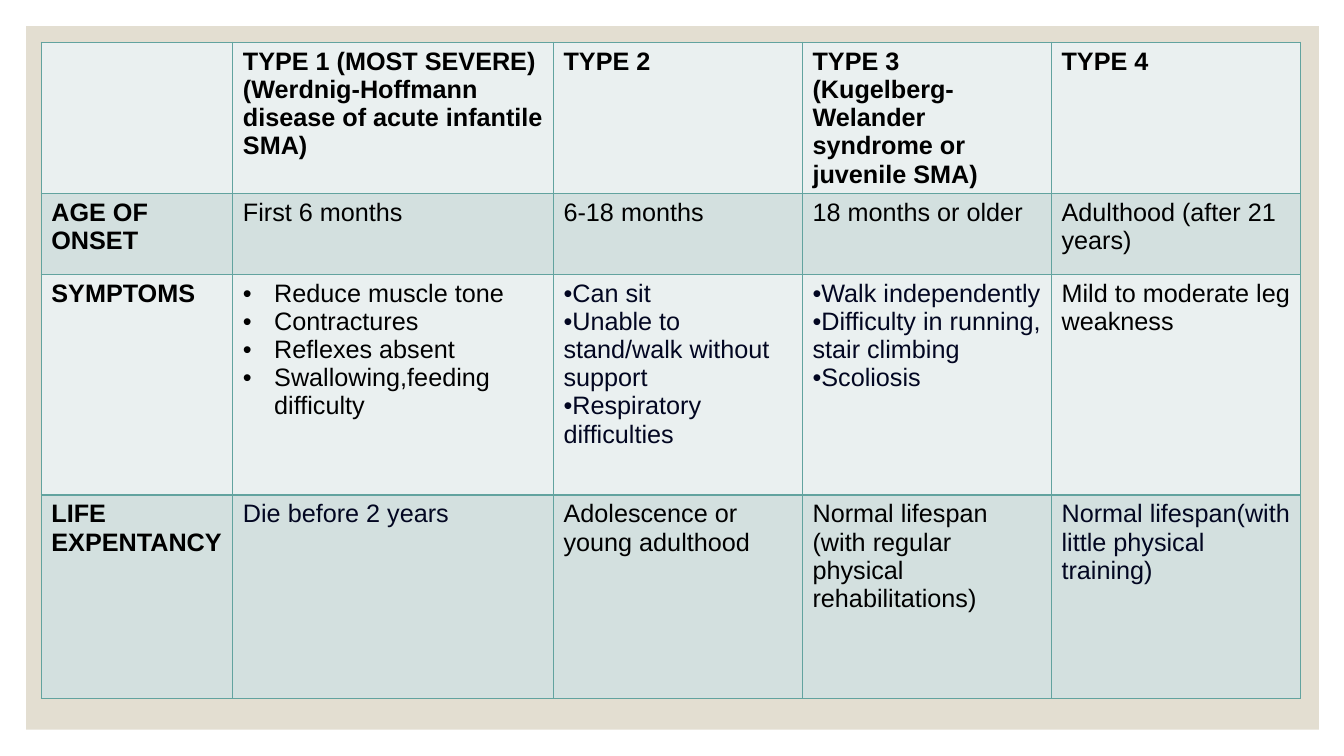
from dataclasses import dataclass

from lxml.etree import SubElement
from pptx import Presentation
from pptx.dml.color import RGBColor
from pptx.enum.shapes import MSO_SHAPE
from pptx.oxml import parse_xml
from pptx.oxml.ns import nsdecls, qn
from pptx.util import Inches, Pt


@dataclass(frozen=True)
class Theme:
    font: str = "Arial"
    size: int = 18
    black: str = "000000"
    ink: str = "020621"
    panel: str = "E3DED1"
    border: str = "62A39F"
    border_width: int = 1
    bands: tuple = ("EAF0F0", "D3E0DF")


COLUMN_WIDTHS = [1.9, 3.18, 2.47, 2.47, 2.47]
ROW_HEIGHTS = [1.49, 0.8, 2.19, 2.02]
HANGING_COLUMN = 1
INK_CELLS = {(2, 2), (2, 3), (3, 1), (3, 4)}
SMA_TYPES = [
    [
        "",
        "TYPE 1 (MOST SEVERE)(Werdnig-Hoffmann disease of acute infantile SMA)",
        "TYPE 2",
        "TYPE 3 (Kugelberg-Welander syndrome or juvenile SMA)",
        "TYPE 4",
    ],
    [
        "AGE OF ONSET",
        "First 6 months",
        "6-18 months",
        "18 months or older",
        "Adulthood (after 21 years)",
    ],
    [
        "SYMPTOMS",
        ["Reduce muscle tone", "Contractures", "Reflexes absent",
         "Swallowing,feeding difficulty"],
        ["Can sit", "Unable to stand/walk without support",
         "Respiratory difficulties"],
        ["Walk independently", "Difficulty in running, stair climbing",
         "Scoliosis"],
        "Mild to moderate leg weakness",
    ],
    [
        "LIFE EXPENTANCY",
        "Die before 2 years",
        "Adolescence or young adulthood",
        "Normal lifespan (with regular physical rehabilitations)",
        "Normal lifespan(with little physical training)",
    ],
]


class SlideBuilder:
    def __init__(self, page, theme):
        self.page = page
        self.theme = theme

    def panel(self, left, top, width, height):
        box = self.page.shapes.add_shape(
            MSO_SHAPE.RECTANGLE, Inches(left), Inches(top), Inches(width), Inches(height)
        )
        box.shadow.inherit = False
        box.fill.solid()
        box.fill.fore_color.rgb = RGBColor.from_string(self.theme.panel)
        box.line.fill.background()

    def table(self, left, top, widths, heights, rows):
        table = self.page.shapes.add_table(
            len(heights), len(widths), Inches(left), Inches(top),
            Inches(sum(widths)), Inches(sum(heights)),
        ).table
        for name, value in {"first_row": False, "horz_banding": False}.items():
            setattr(table, name, value)
        for column, width in zip(table.columns, widths):
            column.width = Inches(width)
        for row, height in zip(table.rows, heights):
            row.height = Inches(height)
        for row_index, row in enumerate(rows):
            for column_index, content in enumerate(row):
                cell = table.cell(row_index, column_index)
                self.cell_frame(cell, self.theme.bands[row_index % 2])
                self.cell_text(cell, content, row_index, column_index)

    def cell_frame(self, cell, fill):
        cell.fill.solid()
        cell.fill.fore_color.rgb = RGBColor.from_string(fill)
        properties = cell._tc.get_or_add_tcPr()
        for position, side in enumerate(("lnL", "lnR", "lnT", "lnB")):
            border = parse_xml(
                f'<a:{side} {nsdecls("a")} w="{Pt(self.theme.border_width)}">'
                f'<a:solidFill><a:srgbClr val="{self.theme.border}"/></a:solidFill>'
                f'</a:{side}>'
            )
            properties.insert(position, border)

    def cell_text(self, cell, content, row_index, column_index):
        bulleted = isinstance(content, list)
        in_ink = (row_index, column_index) in INK_CELLS
        text_format = {
            "name": self.theme.font,
            "size": Pt(self.theme.size),
            "bold": row_index == 0 or column_index == 0,
        }
        color = self.theme.ink if in_ink else self.theme.black
        cell.text_frame.text = "\n".join(content) if bulleted else content
        for para in cell.text_frame.paragraphs:
            if bulleted:
                self.bullet(para, 0.31 if column_index == HANGING_COLUMN else 0)
            for span in para.runs:
                for name, value in text_format.items():
                    setattr(span.font, name, value)
                span.font.color.rgb = RGBColor.from_string(color)

    def bullet(self, para, indent):
        properties = para._p.get_or_add_pPr()
        properties.set("marL", str(Inches(indent)))
        properties.set("indent", str(-Inches(indent)))
        SubElement(properties, qn("a:buFont")).set("typeface", self.theme.font)
        SubElement(properties, qn("a:buChar")).set("char", "•")


def main():
    deck = Presentation()
    deck.slide_width = Inches(13.33)
    deck.slide_height = Inches(7.5)
    page = deck.slides.add_slide(deck.slide_layouts[6])
    builder = SlideBuilder(page, Theme())
    builder.panel(0.26, 0.26, 12.82, 6.98)
    builder.table(0.41, 0.42, COLUMN_WIDTHS, ROW_HEIGHTS, SMA_TYPES)
    deck.save("out.pptx")


if __name__ == "__main__":
    main()
